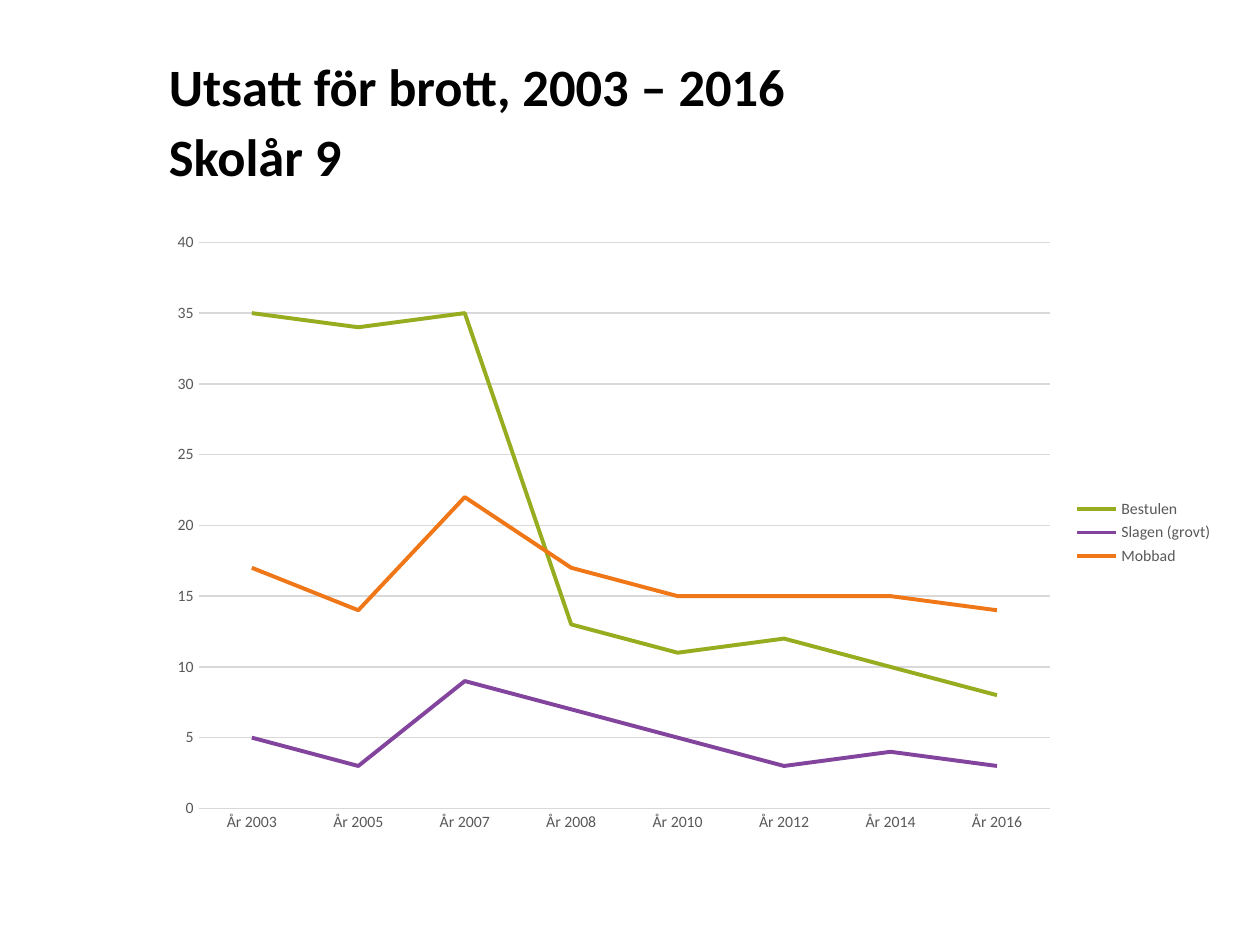
from pptx import Presentation
from pptx.chart.data import CategoryChartData
from pptx.dml.color import RGBColor
from pptx.enum.chart import XL_CHART_TYPE, XL_LEGEND_POSITION, XL_TICK_MARK
from pptx.enum.text import MSO_ANCHOR, MSO_AUTO_SIZE, PP_ALIGN
from pptx.util import Cm, Pt

FONT = "Calibri"
BLACK, GREY, RULE = "000000", "595959", "D9D9D9"
YEARS = [2003, 2005, 2007, 2008, 2010, 2012, 2014, 2016]
CRIMES = [
    ("Bestulen", "97AC1E", [35, 34, 35, 13, 11, 12, 10, 8]),
    ("Slagen (grovt)", "83449D", [5, 3, 9, 7, 5, 3, 4, 3]),
    ("Mobbad", "F07717", [17, 14, 22, 17, 15, 15, 15, 14]),
]


def color(hex_string):
    return RGBColor.from_string(hex_string)


def style_font(font, size, hex_string, bold=False):
    font.name, font.size, font.bold = FONT, Pt(size), bold
    font.color.rgb = color(hex_string)


def style_line(line, hex_string, width):
    line.color.rgb = color(hex_string)
    line.width = Pt(width)


def write_text(frame, text, size, hex_string, bold=False, spacing=None):
    frame.text = text
    paragraph = frame.paragraphs[0]
    paragraph.alignment = PP_ALIGN.LEFT
    paragraph.line_spacing = Pt(spacing) if spacing else None
    for run in paragraph.runs:
        style_font(run.font, size, hex_string, bold)


def place_title(slide, left, top, width, height):
    title = slide.shapes.title
    title.left, title.top, title.width, title.height = left, top, width, height
    frame = title.text_frame
    frame.word_wrap = True
    frame.auto_size = MSO_AUTO_SIZE.NONE
    frame.vertical_anchor = MSO_ANCHOR.MIDDLE
    write_text(frame, "Utsatt för brott, 2003 – 2016\vSkolår 9",
               size=30, hex_string=BLACK, bold=True, spacing=40)


def place_crime_chart(slide, left, top, width, height):
    crime_data = CategoryChartData()
    crime_data.categories = [f"År {year}" for year in YEARS]
    for name, _, shares in CRIMES:
        crime_data.add_series(name, shares)
    chart = slide.shapes.add_chart(
        XL_CHART_TYPE.LINE, left, top, width, height, crime_data).chart
    chart.has_title = False
    style_font(chart.font, 10, BLACK)

    # Lines
    plot = chart.plots[0]
    plot.vary_by_categories = False
    for series, (_, hex_string, _) in zip(plot.series, CRIMES):
        series.smooth = False
        style_line(series.format.line, hex_string, 2.25)

    # Axes and gridlines
    years, shares = chart.category_axis, chart.value_axis
    for axis in (years, shares):
        axis.major_tick_mark = axis.minor_tick_mark = XL_TICK_MARK.NONE
        style_font(axis.tick_labels.font, 9, GREY)
    style_line(years.format.line, RULE, 0.75)
    shares.format.line.fill.background()
    shares.minimum_scale, shares.maximum_scale, shares.major_unit = 0, 40, 5
    shares.has_major_gridlines = True
    style_line(shares.major_gridlines.format.line, RULE, 0.75)

    # Legend
    chart.has_legend = True
    chart.legend.position = XL_LEGEND_POSITION.RIGHT
    chart.legend.include_in_layout = False
    style_font(chart.legend.font, 9, GREY)


def main():
    presentation = Presentation()
    presentation.slide_width, presentation.slide_height = Cm(25.4), Cm(19.05)
    slide = presentation.slides.add_slide(presentation.slide_layouts[5])
    left, width = Cm(3.15), Cm(21.56)
    place_title(slide, left, Cm(0.76), width, Cm(3.18))
    place_crime_chart(slide, left, Cm(4.45), width, Cm(12.57))
    presentation.save("out.pptx")


if __name__ == "__main__":
    main()
